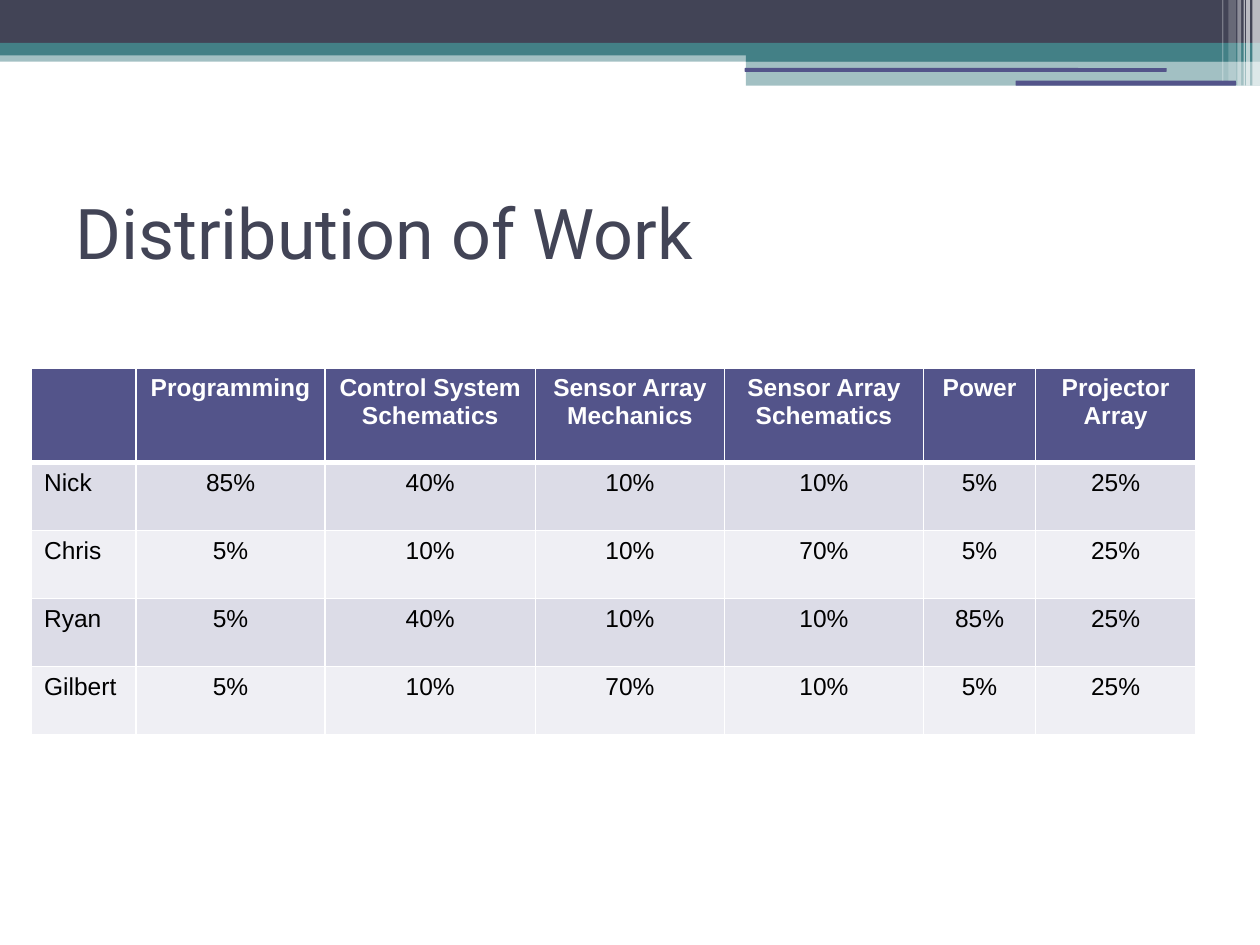
from dataclasses import dataclass

from lxml.etree import SubElement
from pptx import Presentation
from pptx.dml.color import RGBColor as Color
from pptx.enum.shapes import MSO_SHAPE as Preset
from pptx.enum.text import MSO_ANCHOR as Anchor, PP_ALIGN as Align
from pptx.oxml.ns import qn
from pptx.util import Inches, Pt


@dataclass(frozen=True)
class Theme:
    ink: str = "424456"
    teal: str = "438086"
    accent: str = "53548A"
    white: str = "FFFFFF"
    black: str = "000000"
    bands: tuple = ("DCDCE7", "EFEFF4")
    title_font: str = "Roboto"
    table_font: str = "Arial"
    title_size: int = 40
    table_size: int = 14
    thin_rule: int = 1
    thick_rule: int = 3


THEME = Theme()
GRID_COLUMNS, GRID_ROWS = 10, 7.5
SLIDE_WIDTH, SLIDE_HEIGHT = Inches(10), Inches(7.5)

BANDS = [
    (0, 0.4, 10, 0.09, THEME.teal, 49),
    (0, 0, 10, 0.34, THEME.ink, 100),
    (0, 0.34, 10, 0.1, THEME.teal, 100),
    (5.92, 0.39, 4.08, 0.1, THEME.teal, 100),
    (5.92, 0.48, 4.08, 0.2, THEME.teal, 49),
]
RULES = [(5.91, 0.54, 3.35, 0.03), (8.06, 0.64, 1.75, 0.04)]
STRIPES = [
    (9.94, 0.06, 0.68, 64),
    (9.89, 0.03, 0.68, 64),
    (9.87, 0.01, 0.68, 60),
    (9.82, 0.03, 0.68, 40),
    (9.75, 0.06, 0.64, 20),
    (9.7, 0.01, 0.64, 29),
]

COLUMN_WIDTHS = [0.83, 1.5, 1.67, 1.5, 1.58, 0.89, 1.27]
HEADER_HEIGHT, BODY_HEIGHT = 0.75, 0.54
TASKS = [
    "",
    "Programming",
    "Control System Schematics",
    "Sensor Array Mechanics",
    "Sensor Array Schematics",
    "Power",
    "Projector Array",
]
SHARES = {
    "Nick": [85, 40, 10, 10, 5, 25],
    "Chris": [5, 10, 10, 70, 5, 25],
    "Ryan": [5, 40, 10, 10, 85, 25],
    "Gilbert": [5, 10, 70, 10, 5, 25],
}


def across(columns):
    return round(SLIDE_WIDTH * columns / GRID_COLUMNS)


def down(rows):
    return round(SLIDE_HEIGHT * rows / GRID_ROWS)


def place(left, top, width, height):
    return across(left), down(top), across(width), down(height)


def style_font(font, name, size, color, bold=False):
    font.name = name
    font.size = Pt(size)
    font.bold = bold
    font.color.rgb = Color.from_string(color)


def add_block(slide, box, color, opacity=100, preset=Preset.RECTANGLE):
    shape = slide.shapes.add_shape(preset, *place(*box))
    shape.shadow.inherit = False
    shape.line.fill.background()
    shape.fill.solid()
    shape.fill.fore_color.rgb = Color.from_string(color)
    if opacity < 100:
        value = next(shape.element.iter(qn("a:srgbClr")))
        SubElement(value, qn("a:alpha"), val=str(opacity * 1000))


def add_header_art(slide):
    for *box, color, opacity in BANDS:
        add_block(slide, box, color, opacity)
    for box in RULES:
        add_block(slide, box, THEME.accent, preset=Preset.ROUNDED_RECTANGLE)
    for left, width, height, opacity in STRIPES:
        add_block(slide, (left, 0, width, height), THEME.white, opacity)


def add_title(slide, text):
    frame = slide.shapes.add_textbox(*place(0.5, 1.25, 9, 1.17)).text_frame
    frame.word_wrap = True
    frame.vertical_anchor = Anchor.MIDDLE
    frame.margin_top = frame.margin_bottom = Inches(0.1)
    paragraph = frame.paragraphs[0]
    paragraph.text = text
    style_font(paragraph.font, THEME.title_font, THEME.title_size, THEME.ink)


def set_borders(cell, row):
    properties = cell._tc.get_or_add_tcPr()
    top = THEME.thick_rule if row == 1 else THEME.thin_rule
    bottom = THEME.thick_rule if row == 0 else THEME.thin_rule
    widths = {"L": THEME.thin_rule, "R": THEME.thin_rule, "T": top, "B": bottom}
    for side, width in widths.items():
        line = SubElement(properties, qn(f"a:ln{side}"), w=str(Pt(width)))
        fill = SubElement(line, qn("a:solidFill"))
        SubElement(fill, qn("a:srgbClr"), val=THEME.white)


def fill_cell(cell, text, row, column):
    header = row == 0
    set_borders(cell, row)
    cell.fill.solid()
    color = THEME.accent if header else THEME.bands[(row - 1) % 2]
    cell.fill.fore_color.rgb = Color.from_string(color)
    paragraph = cell.text_frame.paragraphs[0]
    paragraph.text = text
    paragraph.alignment = Align.CENTER if header or column else Align.LEFT
    ink = THEME.white if header else THEME.black
    style_font(paragraph.font, THEME.table_font, THEME.table_size, ink, header)


def add_work_table(slide):
    people = [[name, *(f"{share}%" for share in shares)] for name, shares in SHARES.items()]
    content = [TASKS, *people]
    heights = [HEADER_HEIGHT] + [BODY_HEIGHT] * len(people)
    box = place(0.25, 2.92, sum(COLUMN_WIDTHS), sum(heights))
    table = slide.shapes.add_table(len(content), len(TASKS), *box).table
    table.horz_banding = False
    for column, width in zip(table.columns, COLUMN_WIDTHS):
        column.width = across(width)
    for row, height in zip(table.rows, heights):
        row.height = down(height)
    for row, texts in enumerate(content):
        for column, text in enumerate(texts):
            fill_cell(table.cell(row, column), text, row, column)


def main():
    presentation = Presentation()
    presentation.slide_width = SLIDE_WIDTH
    presentation.slide_height = SLIDE_HEIGHT
    slide = presentation.slides.add_slide(presentation.slide_layouts[6])
    add_header_art(slide)
    add_title(slide, "Distribution of Work")
    add_work_table(slide)
    presentation.save("out.pptx")


if __name__ == "__main__":
    main()
